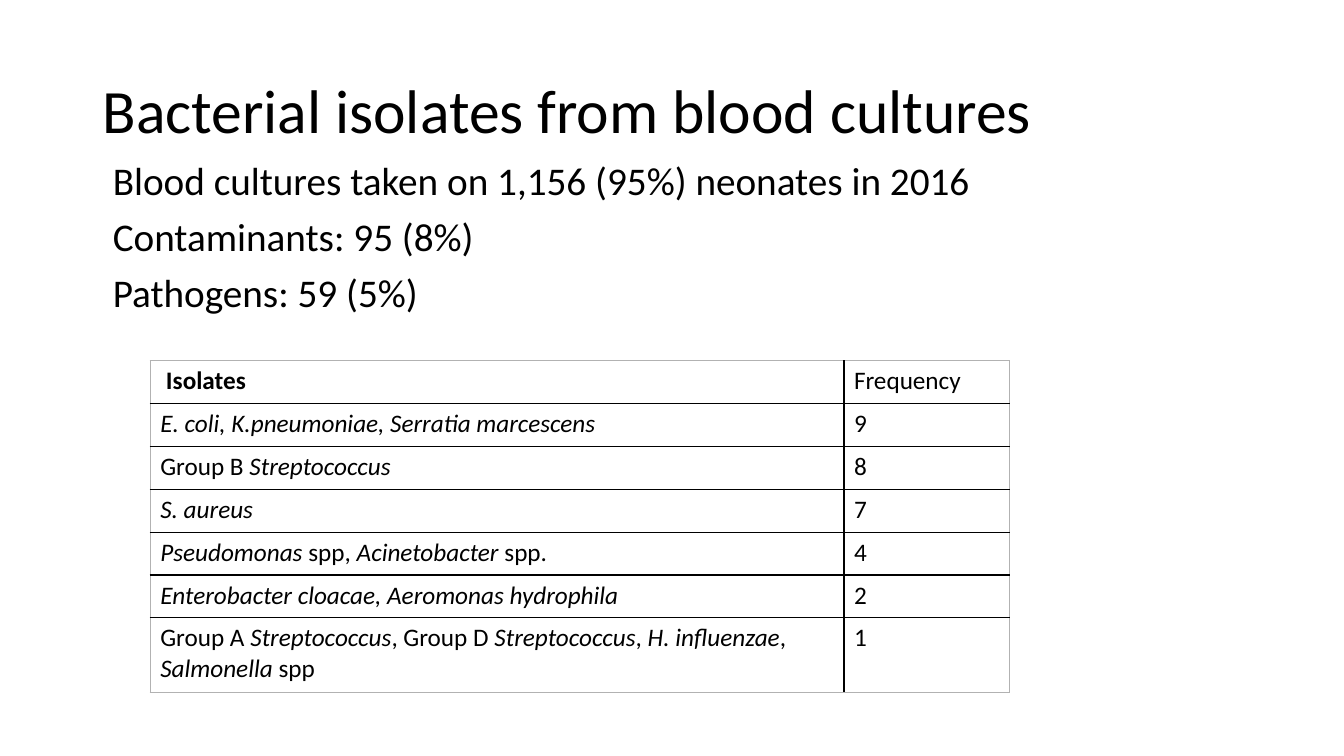
"""Build a slide listing bacterial isolates from neonatal blood cultures."""
import lxml.etree
import pptx
import pptx.dml.color
import pptx.enum.text
import pptx.oxml.ns
import pptx.util

W, H = 13.33, 7.5
BLACK, WHITE, GREY = "000000", "FFFFFF", "B2B2B2"
inch = pptx.util.Inches


def rgb(value):
    return pptx.dml.color.RGBColor.from_string(value)


def add_run(p, text, size, **formats):
    r = p.add_run()
    r.text = text
    r.font.color.rgb = rgb(BLACK)
    for name, value in {"name": "Calibri", "size": pptx.util.Pt(size), **formats}.items():
        setattr(r.font, name, value)


prs = pptx.Presentation()
prs.slide_width, prs.slide_height = inch(W), inch(H)
s = prs.slides.add_slide(prs.slide_layouts[6])

anchors = pptx.enum.text.MSO_ANCHOR
texts = [
    ((0.92, 0.4, 11.5, 1.45), anchors.MIDDLE, 44, 0,
     ["Bacterial isolates from blood cultures"]),
    ((1.02, 1.55, 10.15, 1.8), anchors.TOP, 28, 10,
     ["Blood cultures taken on 1,156 (95%) neonates in 2016",
      "Contaminants: 95 (8%)",
      "Pathogens: 59 (5%)"]),
]
for box, anchor, size, before, lines in texts:
    tf = s.shapes.add_textbox(*map(inch, box)).text_frame
    tf.word_wrap = True
    tf.vertical_anchor = anchor
    for i, line in enumerate(lines):
        p = tf.add_paragraph() if i else tf.paragraphs[0]
        p.line_spacing = 0.9
        p.space_before = pptx.util.Pt(before)
        add_run(p, line, size)

# Asterisks enclose italic species names.
isolates = [
    (" Isolates", "Frequency"),
    ("*E. coli, K.pneumoniae, Serratia marcescens*", "9"),
    ("Group B *Streptococcus*", "8"),
    ("*S. aureus*", "7"),
    ("*Pseudomonas *spp, *Acinetobacter* spp.", "4"),
    ("*Enterobacter cloacae, Aeromonas hydrophila*", "2"),
    ("Group A *Streptococcus*, Group D *Streptococcus*, *H. influenzae*, *Salmonella *spp", "1"),
]
col_widths = [6.88, 1.64]
row_heights = [0.425] * 6 + [0.74]
last_row, last_col = len(row_heights) - 1, len(col_widths) - 1
table = s.shapes.add_table(len(row_heights), len(col_widths), inch(1.49), inch(3.58),
                           inch(sum(col_widths)), inch(sum(row_heights))).table
table.first_row = table.horz_banding = False
for column, width in zip(table.columns, col_widths):
    column.width = inch(width)

for i, (row, height) in enumerate(zip(table.rows, row_heights)):
    row.height = inch(height)
    for j, cell in enumerate(row.cells):
        p = cell.text_frame.paragraphs[0]
        for k, part in enumerate(isolates[i][j].split("*")):
            if part:
                add_run(p, part, 18, italic=k % 2 == 1, bold=i == j == 0)
        tc_pr = cell._tc.get_or_add_tcPr()
        outer = {"a:lnL": j == 0, "a:lnR": j == last_col, "a:lnT": i == 0, "a:lnB": i == last_row}
        for tag, is_outer in outer.items():
            ln = lxml.etree.SubElement(tc_pr, pptx.oxml.ns.qn(tag), w=str(pptx.util.Pt(1)))
            fill = lxml.etree.SubElement(ln, pptx.oxml.ns.qn("a:solidFill"))
            lxml.etree.SubElement(fill, pptx.oxml.ns.qn("a:srgbClr"), val=GREY if is_outer else BLACK)
        cell.fill.solid()
        cell.fill.fore_color.rgb = rgb(WHITE)

prs.save("out.pptx")
